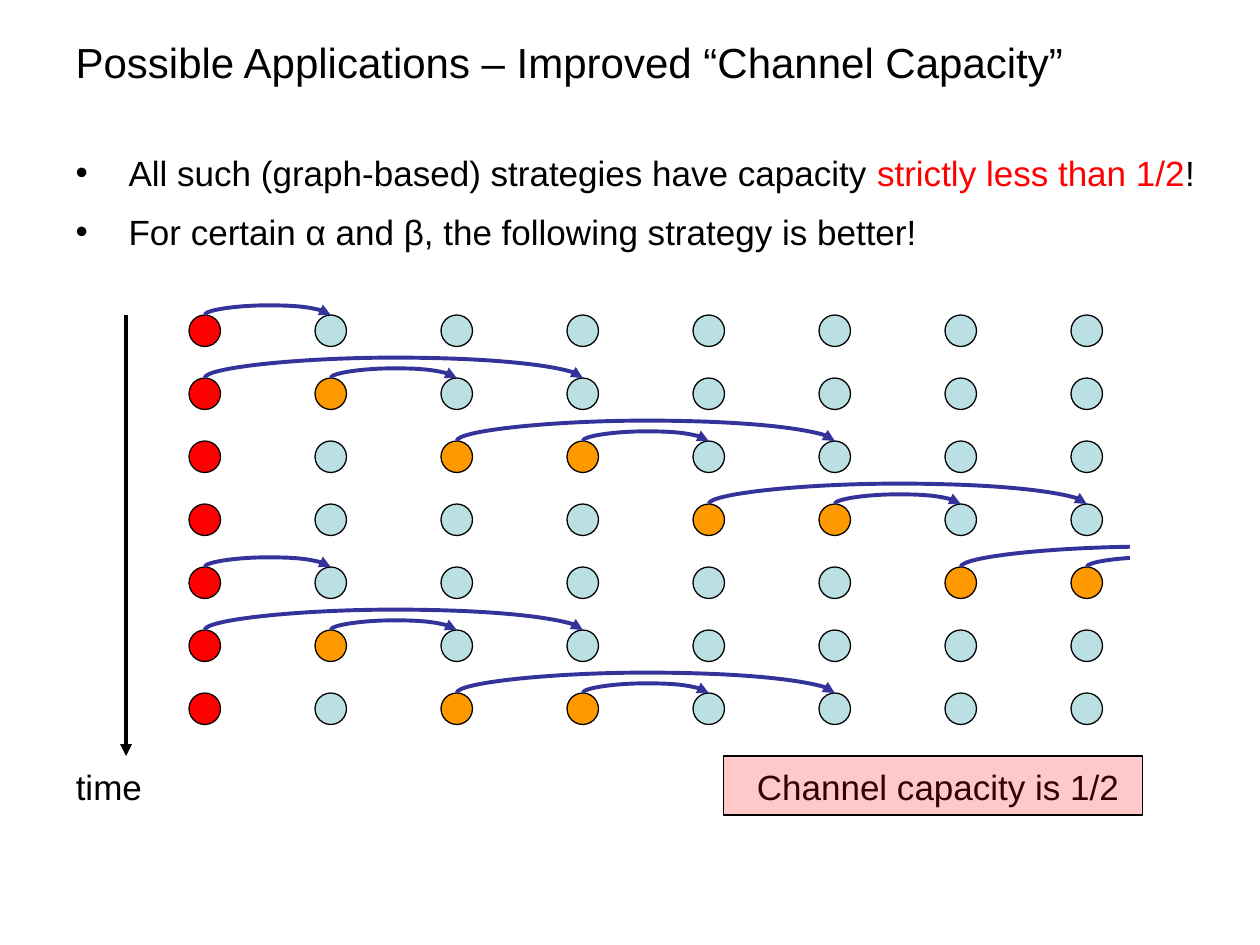
from dataclasses import dataclass

from lxml import etree
from pptx import Presentation
from pptx.dml.color import RGBColor
from pptx.enum.shapes import MSO_CONNECTOR, MSO_SHAPE
from pptx.enum.text import MSO_ANCHOR, MSO_AUTO_SIZE, PP_ALIGN
from pptx.oxml.ns import qn
from pptx.util import Inches, Pt

LEFT, CENTER = PP_ALIGN.LEFT, PP_ALIGN.CENTER
MIDDLE = MSO_ANCHOR.MIDDLE
GROW, FIXED = MSO_AUTO_SIZE.SHAPE_TO_FIT_TEXT, MSO_AUTO_SIZE.NONE
OVAL, RECTANGLE = MSO_SHAPE.OVAL, MSO_SHAPE.RECTANGLE
STRAIGHT, CURVE = MSO_CONNECTOR.STRAIGHT, MSO_CONNECTOR.CURVE

ROWS, COLUMNS, CYCLE = 7, 8, 4
GRID_LEFT, GRID_TOP = 1.5, 2.5
COLUMN_STEP, ROW_STEP, DOT = 1, 0.5, 0.25


@dataclass(frozen=True)
class Theme:
    font: str = "Arial"
    title_size: float = 24
    body_size: float = 20
    outline: float = 0.75
    stroke: float = 2.25
    ink: str = "000000"
    paper: str = "FFFFFF"
    source: str = "FF0000"
    sender: str = "FF9900"
    idle: str = "BBE0E3"
    arc: str = "333399"


def color(value):
    return RGBColor.from_string(value)


def write(para, text, *, font, size, ink):
    span = para.add_run()
    span.text = text
    span.font.name = font
    span.font.size = Pt(size)
    span.font.color.rgb = color(ink)


class SlideBuilder:
    def __init__(self, slide, theme):
        self.slide = slide
        self.theme = theme

    def place(self, box, left, top, width, height):
        box.left, box.top = Inches(left), Inches(top)
        box.width, box.height = Inches(width), Inches(height)

    def fill_para(self, para, spans, size, align=LEFT, before=0):
        para.alignment = align
        para.space_before = Pt(before)
        for text, ink in spans:
            write(para, text, font=self.theme.font, size=size, ink=ink)

    def title(self, text, *place):
        box = self.slide.shapes.title
        self.place(box, *place)
        frame = box.text_frame
        frame.vertical_anchor = MIDDLE
        frame.auto_size = FIXED
        self.fill_para(frame.paragraphs[0], [(text, self.theme.ink)], self.theme.title_size)

    def bullets(self, items, *place):
        box = self.slide.placeholders[1]
        self.place(box, *place)
        frame = box.text_frame
        frame.auto_size = GROW
        for index, spans in enumerate(items):
            para = frame.add_paragraph() if index else frame.paragraphs[0]
            properties = para._p.get_or_add_pPr()
            properties.set("marL", str(Inches(0.42)))
            properties.set("indent", str(-Inches(0.42)))
            etree.SubElement(properties, qn("a:buChar")).set("char", "•")
            self.fill_para(para, spans, self.theme.body_size, before=10 if index else 0)

    def label(self, text, *place, wrap=True):
        box = self.slide.shapes.add_textbox(*map(Inches, place))
        frame = box.text_frame
        frame.word_wrap = wrap
        frame.auto_size = GROW
        self.fill_para(frame.paragraphs[0], [(text, self.theme.ink)], self.theme.body_size, CENTER)

    def shape(self, kind, fill, *place, line=None, opacity=100):
        box = self.slide.shapes.add_shape(kind, *map(Inches, place))
        box.shadow.inherit = False
        box.fill.solid()
        box.fill.fore_color.rgb = color(fill)
        box.line.color.rgb = color(line or self.theme.ink)
        box.line.width = Pt(self.theme.outline)
        if opacity < 100:
            tint = box._element.spPr.find(qn("a:solidFill"))[0]
            etree.SubElement(tint, qn("a:alpha")).set("val", str(opacity * 1000))

    def connector(self, kind, ink, *ends):
        link = self.slide.shapes.add_connector(kind, *ends)
        link.line.color.rgb = color(ink)
        link.line.width = Pt(self.theme.stroke)
        etree.SubElement(link.line._get_or_add_ln(), qn("a:tailEnd")).set("type", "triangle")
        etree.SubElement(link._element.spPr, qn("a:effectLst"))
        return link

    def arrow(self, *ends):
        self.connector(STRAIGHT, self.theme.ink, *map(Inches, ends))

    def arc(self, start, top, reach, rise):
        middle, depth = Inches(start + reach / 2), Pt(0.12)
        ends = (middle, Inches(top - reach / 2), middle + depth, Inches(top + reach / 2))
        properties = self.connector(CURVE, self.theme.arc, *ends)._element.spPr
        properties.xfrm.set("rot", "5400000")
        properties.xfrm.set("flipV", "1")
        guides = properties.find(qn("a:prstGeom")).get_or_add_avLst()
        guide = etree.SubElement(guides, qn("a:gd"))
        guide.set("name", "adj1")
        guide.set("fmla", f"val {round(-Inches(rise) / depth * 100000)}")


def transmissions(row):
    phase = row % CYCLE
    if phase:
        first = 2 * phase - 2
        return [(first, 3), (first + 1, 1)]
    return [(0, 1)] + ([(6, 3), (7, 1)] if row else [])


def draw_network(page, theme):
    for row in range(ROWS):
        top = GRID_TOP + row * ROW_STEP
        senders = {column for column, reach in transmissions(row)}
        for column in range(COLUMNS):
            fill = theme.sender if column in senders else theme.idle
            if column == 0:
                fill = theme.source
            page.shape(OVAL, fill, GRID_LEFT + column * COLUMN_STEP, top, DOT, DOT)
    for row in range(ROWS):
        for column, reach in transmissions(row):
            start = GRID_LEFT + DOT / 2 + column * COLUMN_STEP
            rise = 0.17 if reach > 1 else 0.08
            page.arc(start, GRID_TOP + row * ROW_STEP, reach * COLUMN_STEP, rise)
    page.shape(RECTANGLE, theme.paper, 8.97, 3.5, 1.03, 1.76, line=theme.paper)


def main():
    theme = Theme()
    deck = Presentation()
    deck.slide_width, deck.slide_height = Inches(10), Inches(7.5)
    page = SlideBuilder(deck.slides.add_slide(deck.slide_layouts[1]), theme)
    page.title("Possible Applications – Improved “Channel Capacity”", 0.5, 0.22, 9, 0.54)
    strategies = [
        [
            ("All such (graph-based) strategies have capacity ", theme.ink),
            ("strictly less than 1/2", theme.source),
            ("!", theme.ink),
        ],
        [("For certain α and β, the following strategy is better!", theme.ink)],
    ]
    page.bullets(strategies, 0.5, 1.15, 9.16, 0.93)
    draw_network(page, theme)
    page.arrow(1, 2.5, 1, 6)
    page.label("time", 0.5, 6.03, 0.73, 0.43, wrap=False)
    page.label("Channel capacity is 1/2", 5.39, 6.03, 4.11, 0.43)
    page.shape(RECTANGLE, theme.source, 5.74, 6, 3.33, 0.47, opacity=21)
    deck.save("out.pptx")


if __name__ == "__main__":
    main()
